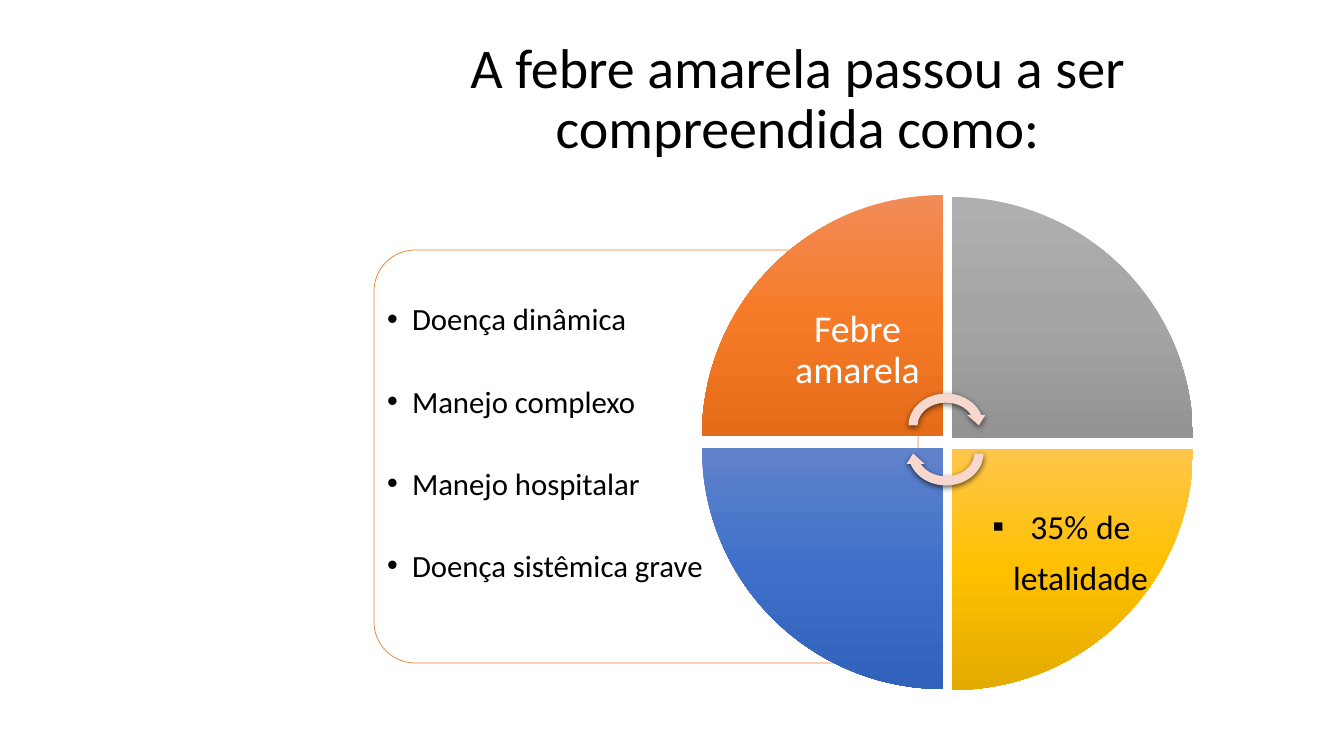
"""Build a slide on how yellow fever came to be understood."""
from lxml import etree
from pptx import Presentation
from pptx import util as u
from pptx.dml.color import RGBColor
from pptx.enum import shapes, text
from pptx.oxml import ns

SCALE = 914400 / 100.8
FONT = "Calibri"
BLACK = RGBColor(0, 0, 0)
WHITE = RGBColor(255, 255, 255)
ORANGE = RGBColor(0xED, 0x7D, 0x31)
PINK = RGBColor(0xF8, 0xD7, 0xCE)
WEDGES = [
    (702, 195, 0, [RGBColor(0xF1, 0x8C, 0x57), RGBColor(0xF6, 0x7B, 0x28), RGBColor(0xE5, 0x6C, 0x19)]),
    (952, 197, 90, [RGBColor(0xAF, 0xAF, 0xAF), RGBColor(0xA5, 0xA5, 0xA5), RGBColor(0x93, 0x93, 0x93)]),
    (952, 449, 180, [RGBColor(0xFF, 0xC6, 0x4B), RGBColor(0xFF, 0xC0, 0x00), RGBColor(0xE3, 0xAB, 0x00)]),
    (702, 448, 270, [RGBColor(0x61, 0x83, 0xCB), RGBColor(0x3E, 0x70, 0xCA), RGBColor(0x30, 0x62, 0xBB)]),
]
TRAITS = ["Doença dinâmica", "Manejo complexo", "Manejo hospitalar", "Doença sistêmica grave"]


def px(size):
    """Turn pixels into EMU."""
    return u.Emu(round(size * SCALE))


def node(up, tag, **attrs):
    """Add a drawing element under another."""
    return etree.SubElement(up, ns.qn("a:" + tag), {k: str(v) for k, v in attrs.items()})


def shape(slide, kind, box, turn=0):
    """Add a preset shape with no line and no shadow."""
    item = slide.shapes.add_shape(kind, *map(px, box))
    item.shadow.inherit = False
    item.line.fill.background()
    item.rotation = turn
    return item


def panel(slide, box):
    """Add the outlined panel behind the list."""
    item = shape(slide, shapes.MSO_SHAPE.ROUNDED_RECTANGLE, box)
    item.adjustments[0] = 0.1
    item.fill.solid()
    item.fill.fore_color.rgb = WHITE
    color = item.fill._xPr.find(".//" + ns.qn("a:srgbClr"))
    node(color, "alpha", val=90000)
    item.line.color.rgb = ORANGE
    item.line.width = u.Pt(0.5)


def wedge(slide, left, top, turn, shades):
    """Add a quarter disc shaded from top to bottom."""
    item = shape(slide, shapes.MSO_SHAPE.PIE_WEDGE, (left, top, 241, 241), turn)
    item.fill.gradient()
    grad = item.fill._xPr.find(ns.qn("a:gradFill"))
    grad.set("rotWithShape", "0")
    for child in list(grad):
        grad.remove(child)
    stops = node(grad, "gsLst")
    for i, shade in enumerate(shades):
        node(node(stops, "gs", pos=i * 50000), "srgbClr", val=shade)
    node(grad, "lin", ang=5400000, scaled=0)


def arrow(slide, top, turn):
    """Add a curved arrow with a soft shadow."""
    item = shape(slide, shapes.MSO_SHAPE.CIRCULAR_ARROW, (904, top, 84, 73), turn)
    item.fill.solid()
    item.fill.fore_color.rgb = PINK
    glow = item._element.spPr.find(ns.qn("a:effectLst"))
    cast = node(glow, "outerShdw", blurRad=57150, dist=19050, dir=5400000, algn="ctr", rotWithShape=0)
    node(node(cast, "srgbClr", val=BLACK), "alpha", val=63000)


def label(slide, box, lines, size, color=BLACK, side=10, edge=5,
          anchor=text.MSO_ANCHOR.MIDDLE, align=text.PP_ALIGN.CENTER,
          space=0.9, after=0, mark=None, indent=0):
    """Add a text box, with bullets when a mark is given."""
    frame = slide.shapes.add_textbox(*map(px, box)).text_frame
    frame.word_wrap = True
    frame.vertical_anchor = anchor
    frame.margin_left = frame.margin_right = px(side)
    frame.margin_top = frame.margin_bottom = px(edge)
    frame.text = "\n".join(lines)
    for para in frame.paragraphs:
        para.alignment = align
        para.line_spacing = space
        para.space_after = u.Pt(after)
        if mark:
            props = para._p.get_or_add_pPr()
            props.set("marL", str(px(indent)))
            props.set("indent", str(-px(indent)))
            node(props, "buFont", typeface="Arial")
            node(props, "buChar", char=mark)
        para.font.name = FONT
        para.font.size = u.Pt(size)
        para.font.color.rgb = color


def main():
    """Draw the slide and save it."""
    deck = Presentation()
    deck.slide_width, deck.slide_height = px(1344), px(756)
    slide = deck.slides.add_slide(deck.slide_layouts[6])
    panel(slide, (374, 250, 544, 413))
    label(slide, (383, 259, 363, 292), TRAITS, 22, side=4, edge=4,
          anchor=text.MSO_ANCHOR.TOP, align=text.PP_ALIGN.LEFT,
          space=2.0, after=6, mark="•", indent=25)
    for part in WEDGES:
        wedge(slide, *part)
    label(slide, (772, 265, 171, 171), ["Febre amarela"], 27, WHITE, side=21, edge=21)
    arrow(slide, 389, 0)
    arrow(slide, 417, 180)
    label(slide, (354, 23, 887, 143), ["A febre amarela passou a ser compreendida como:"], 40,
          anchor=text.MSO_ANCHOR.BOTTOM)
    label(slide, (939, 469, 245, 155), ["35% de letalidade"], 24,
          space=1.25, after=6, mark="▪", indent=38)
    deck.save("out.pptx")


if __name__ == "__main__":
    main()
